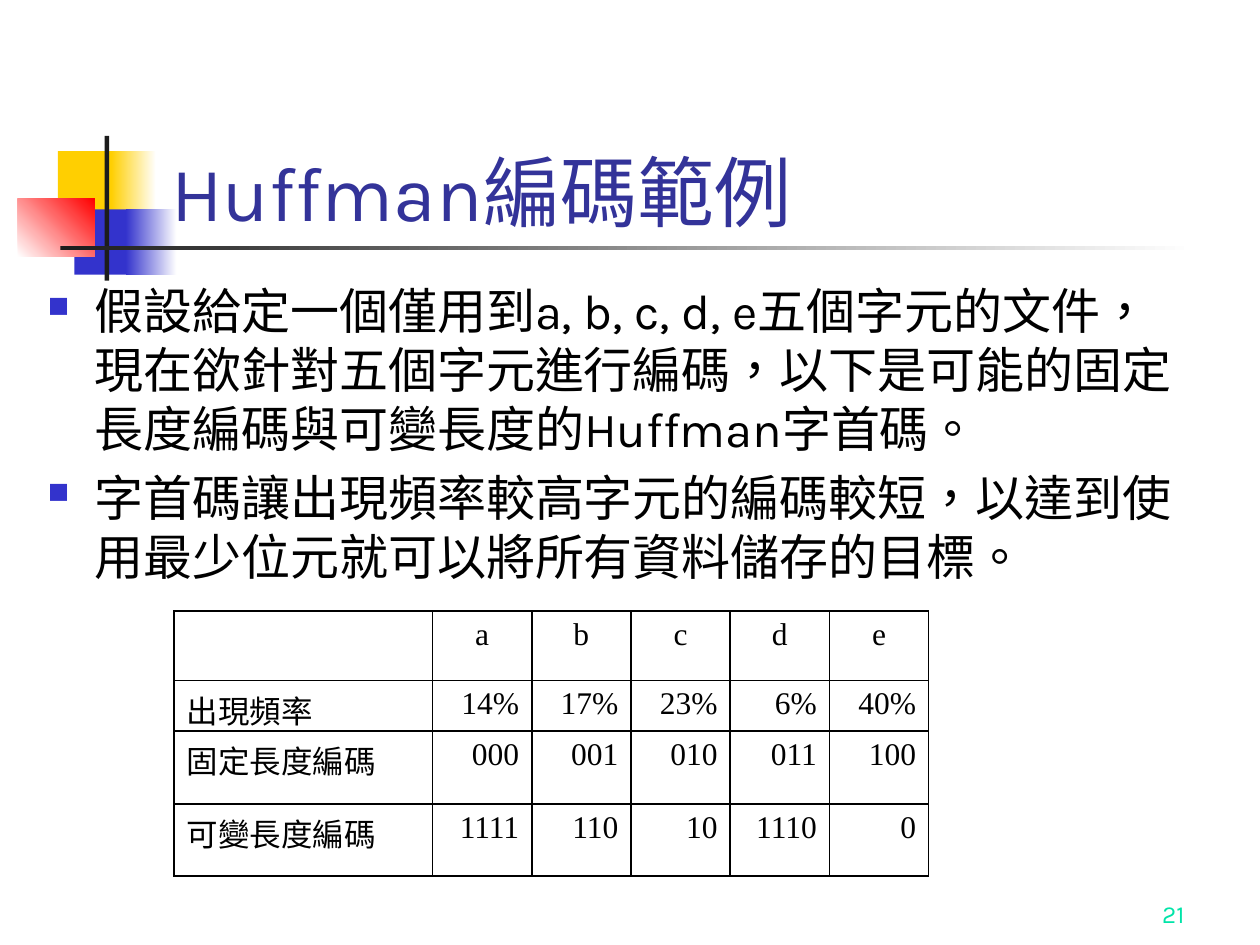
from dataclasses import dataclass

from lxml import etree
from pptx import Presentation
from pptx.dml.color import RGBColor
from pptx.enum import lang, shapes, text
from pptx.oxml import ns
from pptx.util import Cm, Pt

WHITE, BLACK, INK = "FFFFFF", "000000", "1C1C1C"
YELLOW, BLUE, RED = "FFCF01", "3333CC", "FF0000"
HANGING = Cm(0.95)


@dataclass
class Box:
    left: float
    top: float
    width: float
    height: float

    def lengths(self) -> list:
        return [Cm(v) for v in (self.left, self.top, self.width, self.height)]


@dataclass
class Block:
    box: Box
    start: str
    end: str = ""
    angle: int = 0


@dataclass
class Style:
    size: int
    color: str
    font: str = "Karla"


BLOCKS = [
    Block(Box(1.17, 3.05, 1.22, 1.32), YELLOW),
    Block(Box(2.24, 3.05, 0.91, 1.32), YELLOW, WHITE),
    Block(Box(1.5, 4.22, 1.17, 1.32), BLUE),
    Block(Box(2.54, 4.22, 1.02, 1.32), BLUE, WHITE),
    Block(Box(0.36, 4.01, 1.55, 1.17), WHITE, RED, 45),
    Block(Box(2.11, 2.74, 0.09, 2.92), INK),
    Block(Box(1.22, 4.95, 22.86, 0.09), INK, WHITE),
]
POINTS = [
    "假設給定一個僅用到a, b, c, d, e五個字元的文件，現在欲針對五個字元進行編碼，"
    "以下是可能的固定長度編碼與可變長度的Huffman字首碼。",
    "字首碼讓出現頻率較高字元的編碼較短，以達到使用最少位元就可以將所有資料儲存的目標。",
]
CODES = [
    ["", "a", "b", "c", "d", "e"],
    ["出現頻率", "14%", "17%", "23%", "6%", "40%"],
    ["固定長度編碼", "000", "001", "010", "011", "100"],
    ["可變長度編碼", "1111", "110", "10", "1110", "0"],
]
COLUMN_WIDTHS = [5.21] + [2.0] * 5
ROW_HEIGHTS = [1.4, 0.81, 1.47, 1.45]


def rgb(value: str) -> RGBColor:
    return RGBColor.from_string(value)


def add_xml(parent, tag: str, **attrs: str):
    return etree.SubElement(parent, ns.qn(tag), attrs)


def add_block(s, block: Block) -> None:
    sp = s.shapes.add_shape(shapes.MSO_SHAPE.RECTANGLE, *block.box.lengths())
    sp.shadow.inherit = False
    sp.line.fill.background()
    if not block.end:
        sp.fill.solid()
        sp.fill.fore_color.rgb = rgb(block.start)
        return
    sp.fill.gradient()
    sp.fill.gradient_angle = block.angle
    for stop, color in zip(sp.fill.gradient_stops, (block.start, block.end)):
        stop.color.rgb = rgb(color)


def add_run(p, words: str, style: Style) -> None:
    r = p.add_run()
    r.text = words
    r.font.size = Pt(style.size)
    r.font.name = style.font
    r.font.color.rgb = rgb(style.color)
    r.font.language_id = lang.MSO_LANGUAGE_ID.TRADITIONAL_CHINESE


def add_text_box(s, box: Box, anchor=text.MSO_ANCHOR.TOP):
    tf = s.shapes.add_textbox(*box.lengths()).text_frame
    tf.word_wrap = True
    tf.vertical_anchor = anchor
    return tf


def hang(p):
    """Set the hanging indent and return the paragraph properties."""
    props = p._p.get_or_add_pPr()
    props.set("marL", str(HANGING))
    props.set("indent", str(-HANGING))
    return props


def add_bullet(p) -> None:
    props = hang(p)
    add_xml(add_xml(props, "a:spcBef"), "a:spcPct", val="20000")
    add_xml(add_xml(props, "a:buClr"), "a:srgbClr", val=BLUE)
    add_xml(props, "a:buSzPct", val="60000")
    add_xml(props, "a:buChar", char="■")


def add_borders(cell) -> None:
    props = cell._tc.get_or_add_tcPr()
    for i, side in enumerate(("a:lnL", "a:lnR", "a:lnT", "a:lnB")):
        line = add_xml(props, side, w=str(Pt(1)))
        add_xml(add_xml(line, "a:solidFill"), "a:srgbClr", val=BLACK)
        props.insert(i, line)


def add_code_table(s, box: Box) -> None:
    frame = s.shapes.add_table(len(CODES), len(CODES[0]), *box.lengths())
    table = frame.table
    table.first_row = table.horz_banding = False
    for column, width in zip(table.columns, COLUMN_WIDTHS):
        column.width = Cm(width)
    for row, height in zip(table.rows, ROW_HEIGHTS):
        row.height = Cm(height)
    frame.height = Cm(box.height)

    style = Style(18, BLACK, "Times New Roman")
    for i, values in enumerate(CODES):
        for j, value in enumerate(values):
            cell = table.cell(i, j)
            cell.fill.background()
            add_borders(cell)
            if not value:
                continue
            p = cell.text_frame.paragraphs[0]
            hang(p)
            if i == 0:
                p.alignment = text.PP_ALIGN.CENTER
            elif j > 0:
                p.alignment = text.PP_ALIGN.RIGHT
            add_run(p, value, style)


def main() -> None:
    prs = Presentation()
    prs.slide_width, prs.slide_height = Cm(25.4), Cm(19.05)
    s = prs.slides.add_slide(prs.slide_layouts[6])

    for block in BLOCKS:
        add_block(s, block)

    title = add_text_box(s, Box(3.2, 1.73, 21.64, 3.18), text.MSO_ANCHOR.BOTTOM)
    add_run(title.paragraphs[0], "Huffman編碼範例", Style(44, "333399"))

    body = add_text_box(s, Box(0.71, 5.54, 23.6, 3.18))
    for i, point in enumerate(POINTS):
        p = body.add_paragraph() if i else body.paragraphs[0]
        add_bullet(p)
        add_run(p, point, Style(28, BLACK))

    add_code_table(s, Box(3.51, 12.32, 15.21, 5.36))

    number = add_text_box(s, Box(18.85, 17.58, 5.28, 1.27), text.MSO_ANCHOR.BOTTOM)
    number.paragraphs[0].alignment = text.PP_ALIGN.RIGHT
    add_run(number.paragraphs[0], "21", Style(14, "00E4A8"))

    prs.save("out.pptx")


if __name__ == "__main__":
    main()
